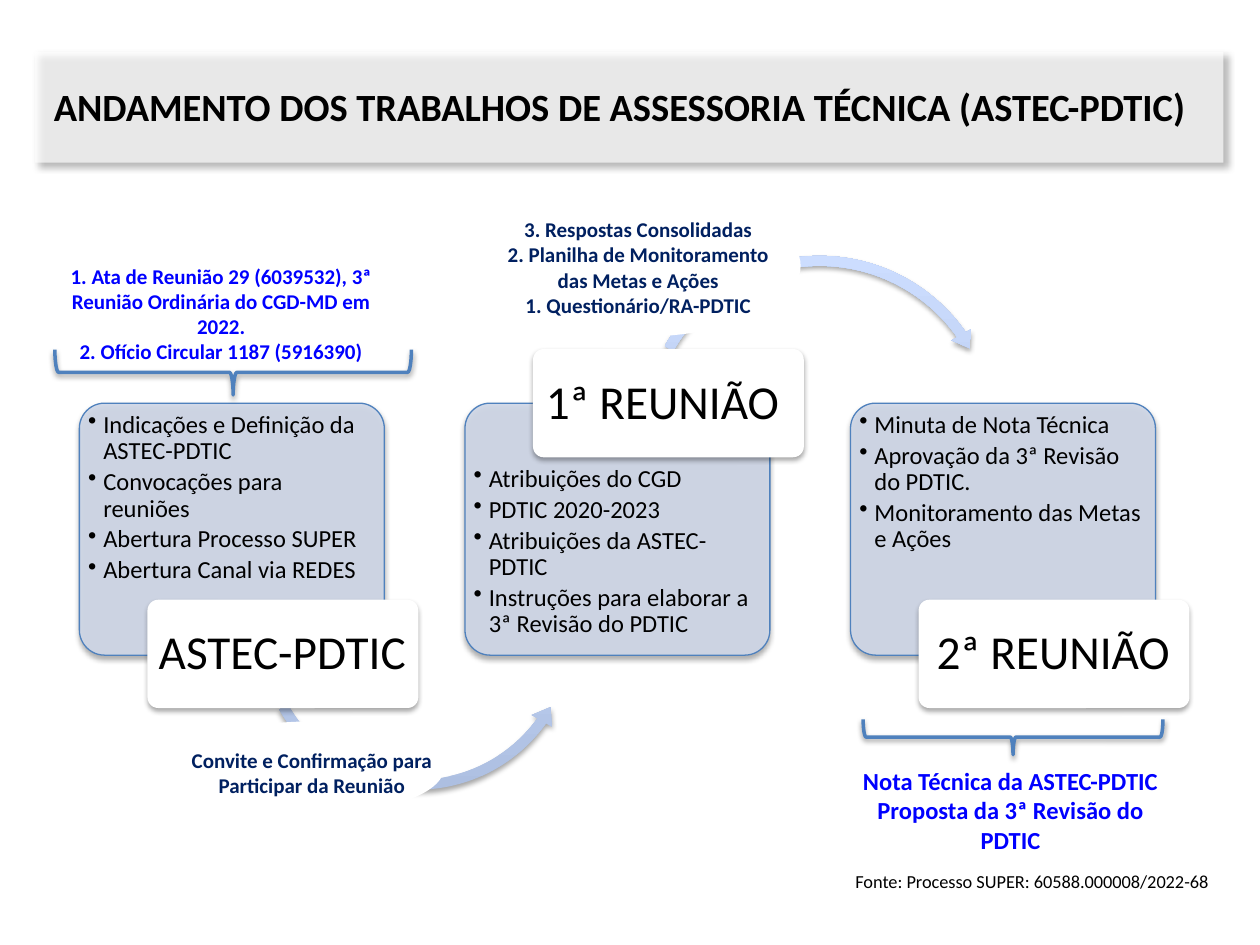
import pptx
import pptx.util
import pptx.dml.color
import pptx.enum.shapes
import pptx.enum.text
import pptx.oxml
import pptx.oxml.ns

Inches, Pt = pptx.util.Inches, pptx.util.Pt
KIND = pptx.enum.shapes.MSO_SHAPE
ALIGN = pptx.enum.text.PP_ALIGN
MID = pptx.enum.text.MSO_ANCHOR.MIDDLE
qn = pptx.oxml.ns.qn
NS = pptx.oxml.ns.nsdecls("a")

COLORS = {"black": "000000", "white": "FFFFFF", "panel": "D0D8E8", "line": "4F81BD",
          "blue": "0000FF", "navy": "002060", "dark": "ADBFE1", "light": "CCDDFF"}

TITLE = "ANDAMENTO DOS TRABALHOS DE ASSESSORIA TÉCNICA (ASTEC-PDTIC)"
STEPS = [
    {"name": "ASTEC-PDTIC", "top": False,
     "items": ["Indicações e Definição da ASTEC-PDTIC", "Convocações para reuniões",
               "Abertura Processo SUPER", "Abertura Canal via REDES"],
     "arrow": (KIND.LEFT_CIRCULAR_ARROW, (2, 3.7, 2.62, 2.62),
               (0.03, 3.647, 21.402, 90.245, 0.035))},
    {"name": "1ª REUNIÃO ", "top": True,
     "items": ["Atribuições do CGD", "PDTIC 2020-2023", "Atribuições da ASTEC-PDTIC",
               "Instruções para elaborar a 3ª Revisão do PDTIC"],
     "arrow": (KIND.CIRCULAR_ARROW, (5.04, 1.98, 2.93, 2.93),
               (0.027, 3.238, 195.007, 125.755, 0.031))},
    {"name": "2ª REUNIÃO", "top": False,
     "items": ["Minuta de Nota Técnica", "Aprovação da 3ª Revisão do PDTIC. ",
               "Monitoramento das Metas e Ações"],
     "arrow": None},
]
OVALS = [(3.79, 1.56, 2.55, 1.1), (1.43, 5.74, 2.08, 0.71)]
BRACES = [(1.67, 1.54, 0.36, 2.83), (7.9, 4.66, 0.28, 2.38)]
NOTES = [
    ((0.29, 2.04, 2.93, 0.91), 12, "blue",
     ["1. Ata de Reunião 29 (6039532), 3ª Reunião Ordinária do CGD-MD em 2022.",
      "2. Ofício Circular 1187 (5916390)"]),
    ((3.84, 1.67, 2.45, 0.91), 12, "navy",
     ["3. Respostas Consolidadas", "2. Planilha de Monitoramento das Metas e Ações",
      "1. Questionário/RA-PDTIC"]),
    ((6.61, 6.03, 2.82, 1.04), 14, "blue",
     ["Nota Técnica da ASTEC-PDTIC", "Proposta da 3ª Revisão do PDTIC"]),
    ((1.22, 5.88, 2.51, 0.5), 12, "navy",
     ["Convite e Confirmação para Participar da Reunião"]),
]
SOURCE = "Fonte: Processo SUPER: 60588.000008/2022-68"
SOFT = (35, 3.1, 1.8, 90)
THIN = (38, 3.1, 1.6, 90)
WIDE = (40, 4, 3, 45)

deck = pptx.Presentation()
deck.slide_width, deck.slide_height = Inches(10), Inches(7.5)
slide = deck.slides.add_slide(deck.slide_layouts[6])


def tint(name):
    return pptx.dml.color.RGBColor.from_string(COLORS[name])


def draw(kind, box, fill=None, line=None, width=0.75, shade=None, alpha=None):
    shape = slide.shapes.add_shape(kind, *map(Inches, box))
    shape.shadow.inherit = False
    if fill:
        shape.fill.solid()
        shape.fill.fore_color.rgb = tint(fill)
    else:
        shape.fill.background()
    if line:
        shape.line.color.rgb = tint(line)
        shape.line.width = Pt(width)
    else:
        shape.line.fill.background()
    props = shape.element.spPr
    if alpha:
        color = props.find(qn("a:solidFill"))[0]
        color.append(pptx.oxml.parse_xml(f'<a:alpha {NS} val="{alpha * 1000}"/>'))
    if shade:
        depth, blur, dist, turn = shade
        props.find(qn("a:effectLst")).append(pptx.oxml.parse_xml(
            f'<a:outerShdw {NS} blurRad="{Pt(blur)}" dist="{Pt(dist)}" '
            f'dir="{turn * 60000}" algn="ctr" rotWithShape="0"><a:srgbClr val="000000">'
            f'<a:alpha val="{depth * 1000}"/></a:srgbClr></a:outerShdw>'))
    return shape


def write(box, lines, size, color="black", bold=False, align=None, pad=(0.1, 0.05),
          anchor=None, space=None, after=0, dot=False, left=0):
    frame = slide.shapes.add_textbox(*map(Inches, box)).text_frame
    frame.word_wrap = True
    frame.margin_left = frame.margin_right = Inches(pad[0])
    frame.margin_top = frame.margin_bottom = Inches(pad[1])
    if anchor is not None:
        frame.vertical_anchor = anchor
    frame.text = "\n".join(lines)
    for para in frame.paragraphs:
        props = para._p.get_or_add_pPr()
        if left:
            props.set("marL", str(Inches(left)))
        if dot:
            props.set("indent", str(Inches(-left)))
            props.append(pptx.oxml.parse_xml(f'<a:buChar {NS} char="•"/>'))
        para.alignment = align
        para.line_spacing = space
        para.space_after = Pt(after)
        for run in para.runs:
            font = run.font
            font.name, font.size, font.bold = "Calibri", Pt(size), bold
            font.color.rgb = tint(color)


for i, step in enumerate(STEPS):
    x = 0.63 + 3.06 * i
    panel = draw(KIND.ROUNDED_RECTANGLE, (x, 3.2, 2.42, 2), "panel", "line",
                 shade=SOFT, alpha=90)
    panel.adjustments[0] = 0.1
    write((x + 0.04, 3.67 if step["top"] else 3.24, 2.33, 1.48), step["items"], 14,
          pad=(0.03, 0.03), space=0.9, after=2.5, dot=True, left=0.12)
    if step["arrow"]:
        kind, box, bends = step["arrow"]
        arrow = draw(kind, box, shade=SOFT)
        for j, bend in enumerate(bends):
            arrow.adjustments[j] = bend
        arrow.fill.gradient()
        arrow.fill.gradient_angle = 90
        for stop, name in zip(arrow.fill.gradient_stops, ("dark", "light")):
            stop.color.rgb = tint(name)
    y = 2.77 if step["top"] else 4.76
    label = draw(KIND.ROUNDED_RECTANGLE, (x + 0.54, y, 2.15, 0.86), "white", shade=SOFT)
    label.adjustments[0] = 0.1
    write((x + 0.56, y + 0.03, 2.1, 0.81), [step["name"]], 27, align=ALIGN.CENTER,
          pad=(0.06, 0.04), anchor=MID, space=0.9)

banner = draw(KIND.ROUND_2_DIAG_RECTANGLE, (0.28, 0.41, 9.43, 0.88), "white",
              shade=WIDE, alpha=68)
banner.adjustments[0] = banner.adjustments[1] = 0
write((0.33, 0.49, 9.4, 0.71), [TITLE], 22, bold=True, anchor=MID)

for box in OVALS:
    draw(KIND.OVAL, box, "white", "white", 2)
for box in BRACES:
    draw(KIND.RIGHT_BRACE, box, line="line", width=2, shade=THIN).rotation = 90
for box, size, color, lines in NOTES:
    write(box, lines, size, color, True, ALIGN.CENTER)
write((6.19, 6.86, 3.55, 0.28), [SOURCE], 10.5, align=ALIGN.JUSTIFY, left=0.5)

deck.save("out.pptx")
